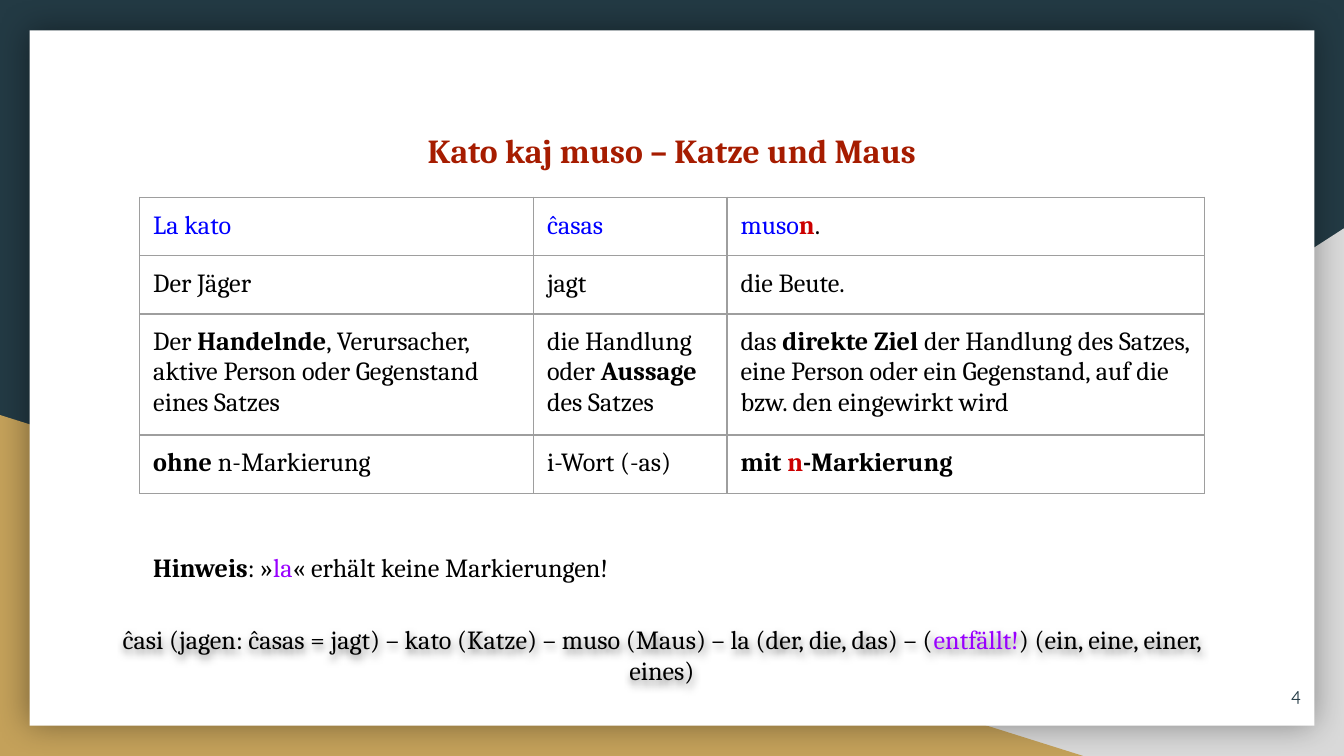
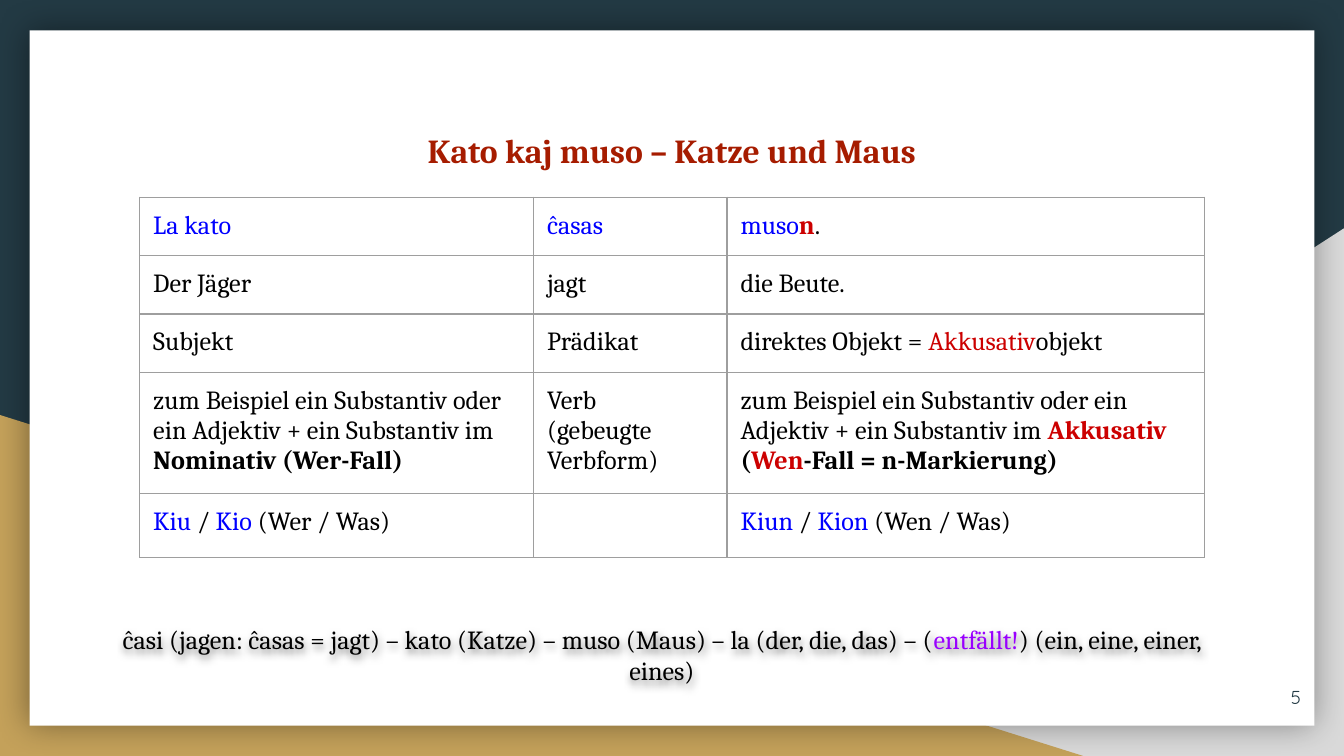
from dataclasses import dataclass
from typing import NamedTuple

from lxml import etree
from pptx import Presentation
from pptx import util as u
from pptx.dml import color as clr
from pptx.enum import shapes, text
from pptx.oxml import ns

WIDE, HIGH = 10, 5.625
INK = {
    "navy": "233A44", "grey": "D9D9D9", "gold": "C4A15A", "white": "FFFFFF",
    "black": "000000", "blue": "0000FF", "red": "CC0000", "rust": "A61C00",
    "violet": "9900FF", "rule": "9E9E9E",
}
SERIF, SANS = "Cambria", "Quicksand"
PAD = u.Inches(0.1)
ALIGN = text.PP_ALIGN
PRESET = shapes.MSO_SHAPE


class Bit(NamedTuple):
    """A stretch of text in one ink and weight."""
    words: str
    ink: str = "black"
    bold: bool = False


Line = tuple[Bit, ...]
Cell = tuple[Line, ...]


class Box(NamedTuple):
    """Left, top, width and height in percent of the slide."""
    left: float
    top: float
    width: float
    height: float

    def size(self) -> list[int]:
        full = (WIDE, HIGH, WIDE, HIGH)
        return [u.Inches(part * whole / 100) for part, whole in zip(self, full)]


@dataclass(frozen=True)
class Plate:
    kind: shapes.MSO_SHAPE
    box: Box
    ink: str
    flip: bool = False
    glow: bool = False


@dataclass(frozen=True)
class Page:
    number: int
    rows: tuple[tuple[Cell, ...], ...]
    hint: Line = ()


# Shared backdrop, text and places
PLATES = (
    Plate(PRESET.RIGHT_TRIANGLE, Box(39.2, 30.2, 60.8, 69.8), "grey", flip=True),
    Plate(PRESET.RIGHT_TRIANGLE, Box(0, 54.9, 80.6, 45.1), "gold"),
    Plate(PRESET.RECTANGLE, Box(2.2, 4, 95.6, 92), "white", glow=True),
)
TITLE = (Bit("Kato kaj muso – Katze und Maus", "rust", True),)
WORDS = (
    Bit("ĉasi (jagen: ĉasas = jagt) – kato (Katze) – muso (Maus) – la (der, die, das) – ("),
    Bit("entfällt!", "violet"),
    Bit(") (ein, eine, einer, eines)"),
)
HEAD = Box(8.5, 14.6, 83, 8.4)
FOOT = Box(7.2, 80.7, 84.1, 12.4)
NOTE = Box(10.4, 70.4, 78.5, 7.6)
NUMBER = Box(91.8, 88.4, 6, 7.6)
COLS = (29.3, 14.4, 35.5)
ROW = 7.5
GRID = (10.4, 26.1)


def cell(*bits: Bit | str) -> Cell:
    return (tuple(Bit(bit) if isinstance(bit, str) else bit for bit in bits),)


# Table content
OPENING = (
    (cell(Bit("La kato", "blue")), cell(Bit("ĉasas", "blue")),
     cell(Bit("muso", "blue"), Bit("n", "red", True), ".")),
    (cell("Der Jäger"), cell("jagt"), cell("die Beute.")),
)
EXAMPLE = "zum Beispiel ein Substantiv oder ein Adjektiv + ein Substantiv im "
PAGES = (
    Page(4, OPENING + (
        (cell("Der ", Bit("Handelnde", bold=True),
              ", Verursacher, aktive Person oder Gegenstand eines Satzes"),
         cell("die Handlung oder ", Bit("Aussage", bold=True), " des Satzes"),
         cell("das ", Bit("direkte Ziel", bold=True),
              " der Handlung des Satzes, eine Person oder ein Gegenstand, "
              "auf die bzw. den eingewirkt wird")),
        (cell(Bit("ohne", bold=True), " n-Markierung"),
         cell("i-Wort (-as)"),
         cell(Bit("mit ", bold=True), Bit("n", "red", True),
              Bit("-Markierung", bold=True))),
    ), hint=(Bit("Hinweis", bold=True), Bit(": »"), Bit("la", "violet"),
             Bit("« erhält keine Markierungen!"))),
    Page(5, OPENING + (
        (cell("Subjekt"), cell("Prädikat"),
         cell("direktes Objekt = ", Bit("Akkusativ", "red"), "objekt")),
        (cell(EXAMPLE, Bit("Nominativ (Wer-Fall)", bold=True)),
         cell("Verb") + cell("(gebeugte Verbform)"),
         cell(EXAMPLE, Bit("Akkusativ", "red", True), Bit(" (", bold=True),
              Bit("Wen", "red", True), Bit("-Fall = n-Markierung)", bold=True))),
        (cell(Bit("Kiu", "blue"), " / ", Bit("Kio", "blue"), " (Wer / Was)"),
         (),
         cell(Bit("Kiun", "blue"), " / ", Bit("Kion", "blue"), " (Wen / Was)")),
    )),
)


# Drawing helpers
def tint(name: str) -> clr.RGBColor:
    return clr.RGBColor.from_string(INK[name])


def child(parent, tag: str, **attrs):
    return etree.SubElement(parent, ns.qn(tag), attrs)


def shade(shape, blur: float, dist: float, alpha: int) -> None:
    """Give a shape a soft black shadow that falls straight down."""
    shape.shadow.inherit = False
    effects = shape.element.spPr.find(ns.qn("a:effectLst"))
    outer = child(effects, "a:outerShdw", blurRad=str(u.Pt(blur)),
                  dist=str(u.Pt(dist)), dir="5400000", algn="bl", rotWithShape="0")
    hue = child(outer, "a:srgbClr", val=INK["black"])
    child(hue, "a:alpha", val=str(alpha * 1000))


def write(frame, lines: Cell, *, size: float = 14, face: str = SERIF,
          align: text.PP_ALIGN = ALIGN.LEFT, lead: float = 1.0) -> None:
    for i, line in enumerate(lines):
        para = frame.paragraphs[0] if i == 0 else frame.add_paragraph()
        para.alignment, para.line_spacing = align, lead
        for bit in line:
            run = para.add_run()
            run.text = bit.words
            run.font.name, run.font.size = face, u.Pt(size)
            run.font.bold = bit.bold
            run.font.color.rgb = tint(bit.ink)


def label(slide, box: Box, line: Line, *, middle: bool = False, **form):
    shape = slide.shapes.add_textbox(*box.size())
    frame = shape.text_frame
    frame.word_wrap = True
    frame.margin_left = frame.margin_right = PAD
    frame.margin_top = frame.margin_bottom = PAD
    anchor = text.MSO_ANCHOR
    frame.vertical_anchor = anchor.MIDDLE if middle else anchor.TOP
    write(frame, (line,), **form)
    return shape


def plate(slide, part: Plate) -> None:
    shape = slide.shapes.add_shape(part.kind, *part.box.size())
    shape.fill.solid()
    shape.fill.fore_color.rgb = tint(part.ink)
    shape.line.fill.background()
    shape.shadow.inherit = False
    if part.flip:
        shape.element.spPr.xfrm.set("flipH", "1")
    if part.glow:
        shade(shape, 18, 0, 40)


def edge(spot) -> None:
    """Rule all four sides of a table cell."""
    props = spot.fill._xPr
    for i, side in enumerate("LRTB"):
        line = child(props, f"a:ln{side}", w=str(u.Pt(0.75)))
        child(child(line, "a:solidFill"), "a:srgbClr", val=INK["rule"])
        props.insert(i, line)


def table(slide, rows: tuple[tuple[Cell, ...], ...]) -> None:
    box = Box(*GRID, sum(COLS), ROW * len(rows))
    grid = slide.shapes.add_table(len(rows), len(COLS), *box.size()).table
    grid.first_row = grid.horz_banding = False
    for col, share in zip(grid.columns, COLS):
        col.width = u.Inches(WIDE * share / 100)
    for r, row in enumerate(rows):
        # A row with an empty cell is a little taller
        share = ROW if all(row) else ROW + 1
        grid.rows[r].height = u.Inches(HIGH * share / 100)
        for c, lines in enumerate(row):
            spot = grid.cell(r, c)
            spot.margin_left = spot.margin_right = PAD
            spot.margin_top = spot.margin_bottom = PAD
            spot.fill.background()
            edge(spot)
            write(spot.text_frame, lines)
            if not lines:
                child(spot.text_frame.paragraphs[0]._p, "a:endParaRPr", sz="1400")


def draw(deck, page: Page) -> None:
    slide = deck.slides.add_slide(deck.slide_layouts[6])
    slide.background.fill.solid()
    slide.background.fill.fore_color.rgb = tint("navy")
    for part in PLATES:
        plate(slide, part)
    label(slide, HEAD, TITLE, size=18, align=ALIGN.CENTER, lead=1.15)
    label(slide, NUMBER, (Bit(str(page.number), "navy"),), middle=True,
          size=10, face=SANS, align=ALIGN.RIGHT)
    shade(label(slide, FOOT, WORDS, align=ALIGN.CENTER), 4, 2, 50)
    table(slide, page.rows)
    if page.hint:
        label(slide, NOTE, page.hint, lead=1.2)


def main() -> None:
    deck = Presentation()
    deck.slide_width, deck.slide_height = u.Inches(WIDE), u.Inches(HIGH)
    for page in PAGES:
        draw(deck, page)
    deck.save("out.pptx")


if __name__ == "__main__":
    main()
